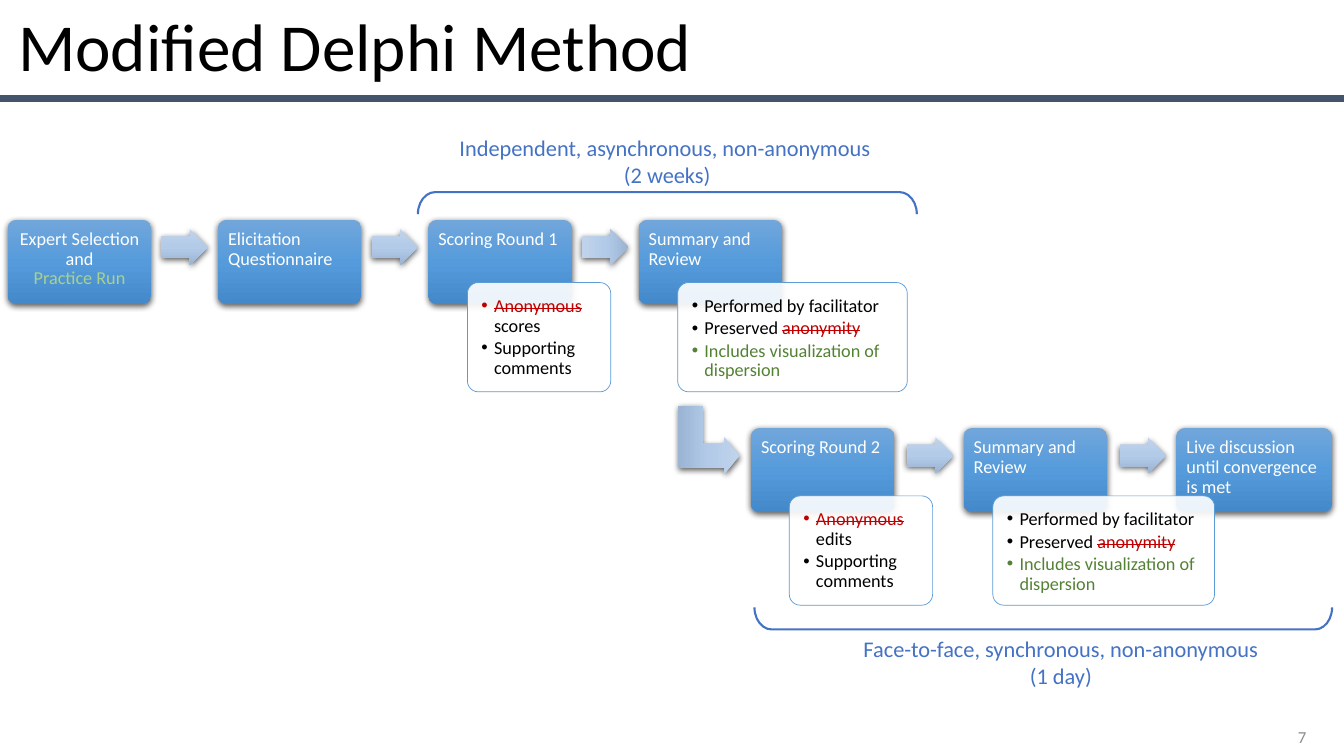
import pptx
import pptx.util
import pptx.oxml
import pptx.oxml.ns
import pptx.dml.color
import pptx.enum.shapes
import pptx.enum.text

Pt = pptx.util.Pt
KIND = pptx.enum.shapes.MSO_SHAPE
ALIGN = pptx.enum.text.PP_ALIGN
ANCHOR = pptx.enum.text.MSO_ANCHOR
NS = 'xmlns:a="http://schemas.openxmlformats.org/drawingml/2006/main"'

THEME = dict(
    font="Calibri", black="000000", white="FFFFFF", red="C00000",
    green="548235", lime="A9D18E", blue="4472C4", edge="5B9BD5",
    rule="44546A", gray="8C8C8C",
    step=("71A6DB", "559BDB", "448ACA"), arrow=("C0D3EB", "B3CBE9", "9BB4D3"),
    title=48, label=16, body=13, small=12,
)

# Content: a paragraph is a list of (text, colour) runs; red runs are struck out
TITLE = "Modified Delphi Method"
NUMBER = "7"
REVIEW = [[("Performed by facilitator", "black")],
          [("Preserved ", "black"), ("anonymity", "red")],
          [("Includes visualization of dispersion", "green")]]


def scoring(item):
    return [[("Anonymous", "red"), (" " + item, "black")],
            [("Supporting comments", "black")]]


def plain(text):
    return [[(text, "white")]]


# Each step: paragraphs, width, alignment
ROWS = [
    dict(left=5.6, top=157, pitch=150.2, turns=(90, 90, 0), steps=[
        ([[("Expert Selection", "white")], [("and", "white")],
          [("Practice Run", "lime")]], 102.4, ALIGN.CENTER),
        (plain("Elicitation Questionnaire"), 102.4, ALIGN.LEFT),
        (plain("Scoring Round 1"), 102.4, ALIGN.LEFT),
        (plain("Summary and Review"), 102.4, ALIGN.LEFT)]),
    dict(left=536.5, top=305.7, pitch=151.9, turns=(90, 90), steps=[
        (plain("Scoring Round 2"), 102.4, ALIGN.LEFT),
        (plain("Summary and Review"), 102.4, ALIGN.LEFT),
        (plain("Live discussion until convergence is met"), 111, ALIGN.LEFT)]),
]
# Each note: paragraphs, left, top, width
NOTES = [
    (scoring("scores"), 333.9, 201.8, 102.4),
    (REVIEW, 484.1, 201.8, 164),
    (scoring("edits"), 563.8, 354.2, 102.4),
    (REVIEW, 709.2, 354.2, 158.4),
]
# Each phase: lines, box, alignment of first line, bracket box, bracket turn
PHASES = [
    (("Independent, asynchronous, non-anonymous", "(2 weeks)"),
     (321.1, 92.2, 311, 46), ALIGN.LEFT, (468.8, -33.1, 15.8, 356.4), 270),
    (("Face-to-face, synchronous, non-anonymous", "(1 day)"),
     (563.8, 450, 388, 46), ALIGN.CENTER, (737.3, 235.4, 15.8, 412.6), 90),
]

STEP_H, NOTE_H = 60, 78.1
ARROW_W, ARROW_H, ARROW_GAP, ARROW_DROP = 33.1, 25.6, 7.4, 6.7

deck = pptx.Presentation()
deck.slide_width, deck.slide_height = Pt(960), Pt(540)
slide = deck.slides.add_slide(deck.slide_layouts[6])
shapes = slide.shapes


def color(name):
    return pptx.dml.color.RGBColor.from_string(THEME[name])


def add_xml(node, text):
    node.append(pptx.oxml.parse_xml(text))


def write(shape, paras, size, inset, aligns, anchor=ANCHOR.TOP,
          space=None, bullet=False):
    frame = shape.text_frame
    frame.word_wrap = True
    frame.vertical_anchor = anchor
    frame.margin_left = frame.margin_right = Pt(inset[0])
    frame.margin_top = frame.margin_bottom = Pt(inset[1])
    for i, runs in enumerate(paras):
        para = frame.paragraphs[0] if i == 0 else frame.add_paragraph()
        para.alignment = aligns[min(i, len(aligns) - 1)]
        if space:
            para.line_spacing = space
        if bullet:
            props = para._p.get_or_add_pPr()
            props.set("marL", str(Pt(9)))
            props.set("indent", str(-Pt(9)))
            para.space_after = Pt(1.95)
            add_xml(props, f'<a:buFont {NS} typeface="Arial"/>')
            add_xml(props, f'<a:buChar {NS} char="•"/>')
        for text, tone in runs:
            run = para.add_run()
            run.text = text
            run.font.name = THEME["font"]
            run.font.size = Pt(size)
            run.font.color.rgb = color(tone)
            if tone == "red":
                run._r.get_or_add_rPr().set("strike", "sngStrike")


def add_shape(kind, box, *adjust):
    shape = shapes.add_shape(kind, *map(Pt, box))
    shape.shadow.inherit = False
    for i, value in enumerate(adjust):
        shape.adjustments[i] = value
    return shape


def add_text(box, paras, size, aligns, **more):
    write(shapes.add_textbox(*map(Pt, box)), paras, size, (7.2, 3.6),
          aligns, **more)


def shade(shape, tones, turn=90):
    """Three-stop gradient with a soft drop shadow and no outline."""
    shape.line.fill.background()
    shape.fill.gradient()
    props = shape._element.spPr
    stops = "".join(f'<a:gs pos="{i * 50000}"><a:srgbClr val="{tone}"/></a:gs>'
                    for i, tone in enumerate(tones))
    props.replace(props.find(pptx.oxml.ns.qn("a:gradFill")), pptx.oxml.parse_xml(
        f'<a:gradFill {NS} rotWithShape="1"><a:gsLst>{stops}</a:gsLst>'
        f'<a:lin ang="{turn * 60000}" scaled="0"/></a:gradFill>'))
    add_xml(props.find(pptx.oxml.ns.qn("a:effectLst")),
            f'<a:outerShdw {NS} blurRad="{Pt(4.5)}" dist="{Pt(1.5)}" '
            'dir="5400000" algn="ctr" rotWithShape="0"><a:srgbClr val="000000">'
            '<a:alpha val="63000"/></a:srgbClr></a:outerShdw>')


# Title, rule and slide number
rule = shapes.add_connector(pptx.enum.shapes.MSO_CONNECTOR.STRAIGHT,
                            Pt(0), Pt(70.6), Pt(960), Pt(70.6))
rule.line.color.rgb = color("rule")
rule.line.width = Pt(5)
add_xml(rule._element.spPr, f"<a:effectLst {NS}/>")
add_text((5.8, 0, 954.2, 70.6), [[(TITLE, "black")]], THEME["title"],
         [ALIGN.LEFT], anchor=ANCHOR.MIDDLE, space=0.9)
add_text((724.3, 511.9, 216, 28.8), [[(NUMBER, "gray")]], THEME["small"],
         [ALIGN.RIGHT], anchor=ANCHOR.MIDDLE)

# Steps, with an arrow ahead of each one but the first
for row in ROWS:
    for i, (paras, width, align) in enumerate(row["steps"]):
        left = row["left"] + i * row["pitch"]
        step = add_shape(KIND.ROUNDED_RECTANGLE,
                         (left, row["top"], width, STEP_H), 0.1)
        shade(step, THEME["step"])
        write(step, paras, THEME["body"], (5.4, 5.4), [align], space=0.9)
        if i:
            arrow = add_shape(KIND.RIGHT_ARROW,
                              (left - ARROW_GAP - ARROW_W,
                               row["top"] + ARROW_DROP, ARROW_W, ARROW_H),
                              0.6, 0.5)
            shade(arrow, THEME["arrow"], row["turns"][i - 1])

# Bent arrow from the first row to the second
bend = add_shape(KIND.BENT_UP_ARROW, (482.4, 292.3, 48.2, 43.9),
                 0.392, 0.293, 0.25)
bend.rotation = 90
shade(bend, THEME["arrow"])

# Notes over the steps
for paras, left, top, width in NOTES:
    note = add_shape(KIND.ROUNDED_RECTANGLE, (left, top, width, NOTE_H), 0.1)
    note.fill.solid()
    note.fill.fore_color.rgb = color("white")
    add_xml(note._element.spPr.find(".//" + pptx.oxml.ns.qn("a:srgbClr")),
            f'<a:alpha {NS} val="90000"/>')
    note.line.color.rgb = color("edge")
    note.line.width = Pt(0.5)
    write(note, paras, THEME["body"], (7.8, 7.8), [ALIGN.LEFT],
          space=0.9, bullet=True)

# Phase brackets and labels
for lines, box, first, span, turn in PHASES:
    brace = add_shape(KIND.RIGHT_BRACKET, span, 0.775)
    brace.rotation = turn
    brace.fill.background()
    brace.line.color.rgb = color("blue")
    brace.line.width = Pt(1.5)
    add_text(box, [[(line, "blue")] for line in lines], THEME["label"],
             [first, ALIGN.CENTER])

deck.save("out.pptx")
